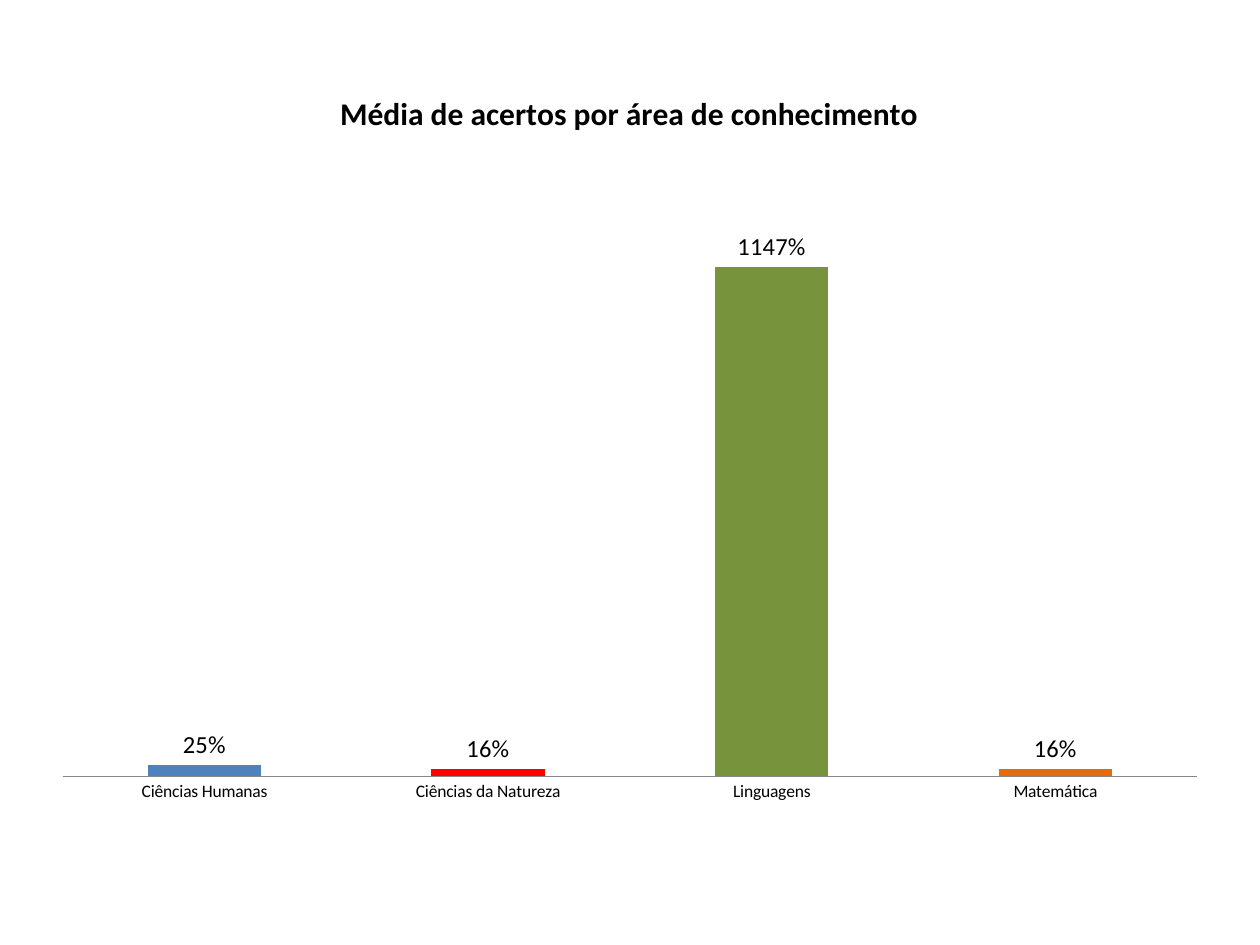
"""Builds a slide with one column chart of average scores by subject area."""
import pptx
import pptx.chart.data
import pptx.dml.color
import pptx.enum.chart
import pptx.oxml
import pptx.oxml.ns
import pptx.util

COLORS = {"text": "000000", "axis": "868686", "humanas": "4F81BD",
          "natureza": "FF0000", "linguagens": "77933C", "matematica": "E46C0A"}
AREAS = [("Ciências Humanas", 0.25, "humanas"),
         ("Ciências da Natureza", 0.16, "natureza"),
         ("Linguagens", 11.47, "linguagens"),
         ("Matemática", 0.16, "matematica")]


class Deck:
    def __init__(self, width, height, font):
        self.prs = pptx.Presentation()
        self.prs.slide_width = pptx.util.Inches(width)
        self.prs.slide_height = pptx.util.Inches(height)
        self.font = font
        self.s = self.prs.slides.add_slide(self.prs.slide_layouts[6])

    def color(self, name):
        return pptx.dml.color.RGBColor.from_string(COLORS[name])

    def style(self, font, size, bold=False):
        font.name, font.size, font.bold = self.font, pptx.util.Pt(size), bold
        font.color.rgb = self.color("text")

    def layout(self, parent, inner=False, **shares):
        for old in parent.findall(pptx.oxml.ns.qn("c:layout")):
            parent.remove(old)
        target = '<c:layoutTarget val="inner"/>' if inner else ""
        modes = "".join(f'<c:{k}Mode val="edge"/>' for k in "xy")
        values = "".join(f'<c:{k} val="{v}"/>' for k, v in shares.items())
        return pptx.oxml.parse_xml(
            f'<c:layout {pptx.oxml.ns.nsdecls("c")}><c:manualLayout>'
            f'{target}{modes}{values}</c:manualLayout></c:layout>')

    def title(self, chart, text):
        tf = chart.chart_title.text_frame
        tf.text = text
        self.style(tf.paragraphs[0].runs[0].font, 18, True)
        title = chart.chart_title._element
        layout = self.layout(title, x=0.25, y=0.035)
        title.find(pptx.oxml.ns.qn("c:tx")).addnext(layout)

    def axes(self, chart, top):
        none = pptx.enum.chart.XL_TICK_MARK.NONE
        cat, val = chart.category_axis, chart.value_axis
        cat.major_tick_mark = cat.minor_tick_mark = none
        cat.format.line.color.rgb = self.color("axis")
        cat.format.line.width = pptx.util.Pt(0.75)
        val.minimum_scale, val.maximum_scale = 0, top
        val.has_major_gridlines = False
        val.tick_labels.number_format = "0%"
        val.tick_labels.number_format_is_linked = False
        val.visible = False

    def bars(self, plot, names):
        plot.gap_width = 150
        plot.vary_by_categories = False
        series = plot.series[0]
        series.invert_if_negative = False
        series.format.fill.solid()
        series.format.fill.fore_color.rgb = self.color(names[0])
        for i, name in enumerate(names[1:], 1):
            fill = series.points[i].format.fill
            fill.solid()
            fill.fore_color.rgb = self.color(name)
        labels = series.data_labels
        labels.show_value = True
        labels.number_format, labels.number_format_is_linked = "0%", False
        labels.position = pptx.enum.chart.XL_LABEL_POSITION.OUTSIDE_END
        self.style(labels.font, 14)

    def column_chart(self, text, rows, x, y, w, h, top):
        cats, vals, names = zip(*rows)
        data = pptx.chart.data.CategoryChartData(number_format="0%")
        data.categories = cats
        data.add_series("Series 1", vals)
        width, height = self.prs.slide_width, self.prs.slide_height
        chart = self.s.shapes.add_chart(
            pptx.enum.chart.XL_CHART_TYPE.COLUMN_CLUSTERED,
            int(x * width), int(y * height), int(w * width), int(h * height),
            data).chart
        chart.has_legend = False
        self.style(chart.font, 10)
        self.title(chart, text)
        self.axes(chart, top)
        self.bars(chart.plots[0], names)
        area = chart._chartSpace.chart.plotArea
        area.insert(0, self.layout(area, True, x=0.02, y=0.125, w=0.96, h=0.82))


def main():
    deck = Deck(10, 7.5, "Calibri")
    deck.column_chart("Média de acertos por área de conhecimento", AREAS,
                      x=0.031, y=0.063, w=0.938, h=0.803, top=14)
    deck.prs.save("out.pptx")


if __name__ == "__main__":
    main()
